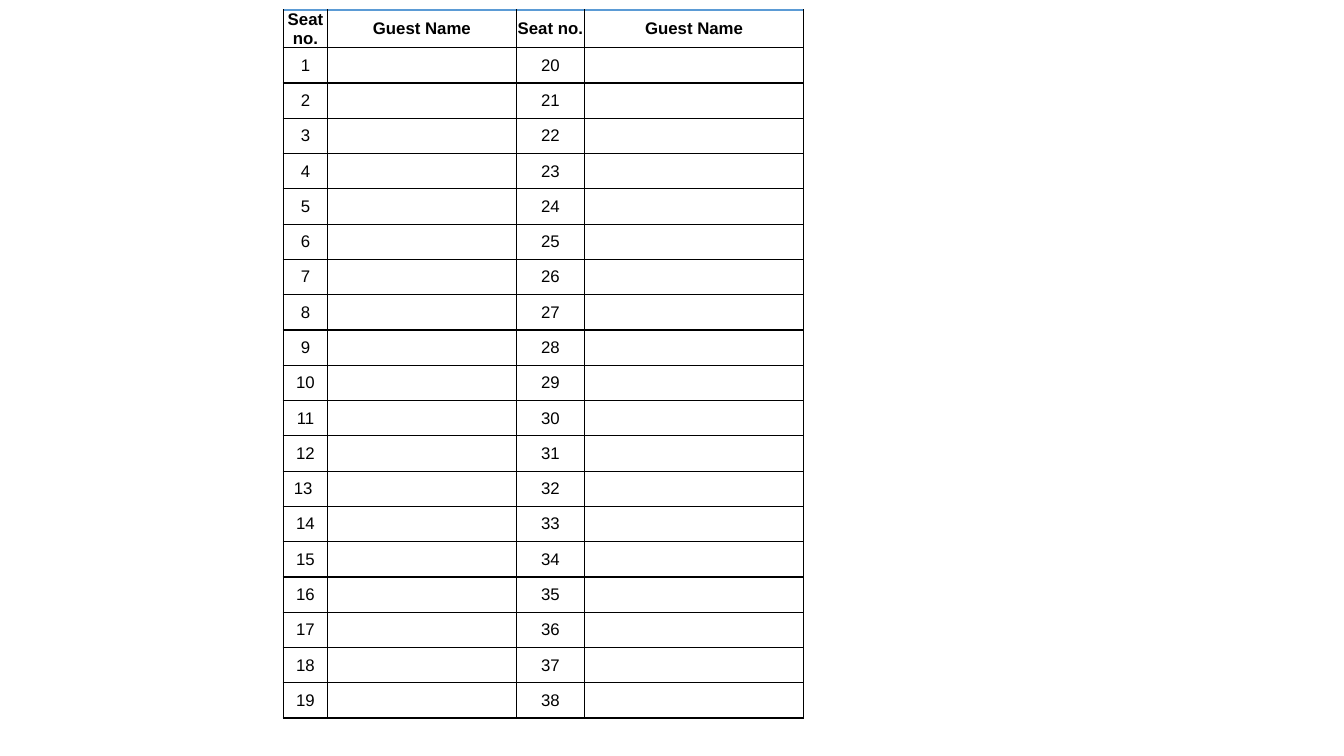
from lxml import etree
from pptx import Presentation
from pptx.dml.color import RGBColor
from pptx.enum.text import MSO_ANCHOR, PP_ALIGN
from pptx.oxml.ns import qn
from pptx.util import Inches, Pt

MIDDLE = MSO_ANCHOR.MIDDLE
CENTER = PP_ALIGN.CENTER
BLACK = RGBColor(0x00, 0x00, 0x00)
BLUE = RGBColor(0x5B, 0x9B, 0xD5)
WIDE, HIGH = 13.33, 7.5
HEADS = ["Seat no.", "Guest Name", "Seat no.", "Guest Name"]
COLS = [0.44, 1.87, 0.68, 2.17]
SEATS = 19
HEAD, ROW = 0.36, 0.35


def add_edges(cell, top):
    props = cell._tc.get_or_add_tcPr()
    for side, color in (("L", BLACK), ("R", BLACK), ("T", top), ("B", BLACK)):
        line = etree.SubElement(props, qn(f"a:ln{side}"), w=str(Pt(1)))
        fill = etree.SubElement(line, qn("a:solidFill"))
        etree.SubElement(fill, qn("a:srgbClr"), val=str(color))


def style_cell(cell, text, head):
    cell.margin_left = cell.margin_right = 0
    cell.margin_top = cell.margin_bottom = 0
    cell.vertical_anchor = MIDDLE
    add_edges(cell, BLUE if head else BLACK)
    cell.fill.background()
    cell.text_frame.text = text
    para = cell.text_frame.paragraphs[0]
    para.alignment = CENTER
    for run in para.runs:
        run.font.name = "Arial"
        run.font.size = Pt(12)
        run.font.bold = head
        run.font.color.rgb = BLACK


def seat_rows():
    rows = [HEADS]
    for seat in range(1, SEATS + 1):
        label = "13 " if seat == 13 else str(seat)
        rows.append([label, "", str(seat + SEATS), ""])
    return rows


def add_seats(slide, left, top):
    rows = seat_rows()
    frame = slide.shapes.add_table(
        len(rows), len(COLS), Inches(left), Inches(top),
        Inches(sum(COLS)), Inches(HEAD + SEATS * ROW))
    table = frame.table
    table.first_row = False
    table.horz_banding = False
    for col, width in zip(table.columns, COLS):
        col.width = Inches(width)
    for num, texts in enumerate(rows):
        table.rows[num].height = Inches(ROW if num else HEAD)
        for col, text in enumerate(texts):
            style_cell(table.cell(num, col), text, num == 0)


def main():
    deck = Presentation()
    deck.slide_width = Inches(WIDE)
    deck.slide_height = Inches(HIGH)
    slide = deck.slides.add_slide(deck.slide_layouts[6])
    add_seats(slide, 2.81, 0.1)
    deck.save("out.pptx")


if __name__ == "__main__":
    main()
